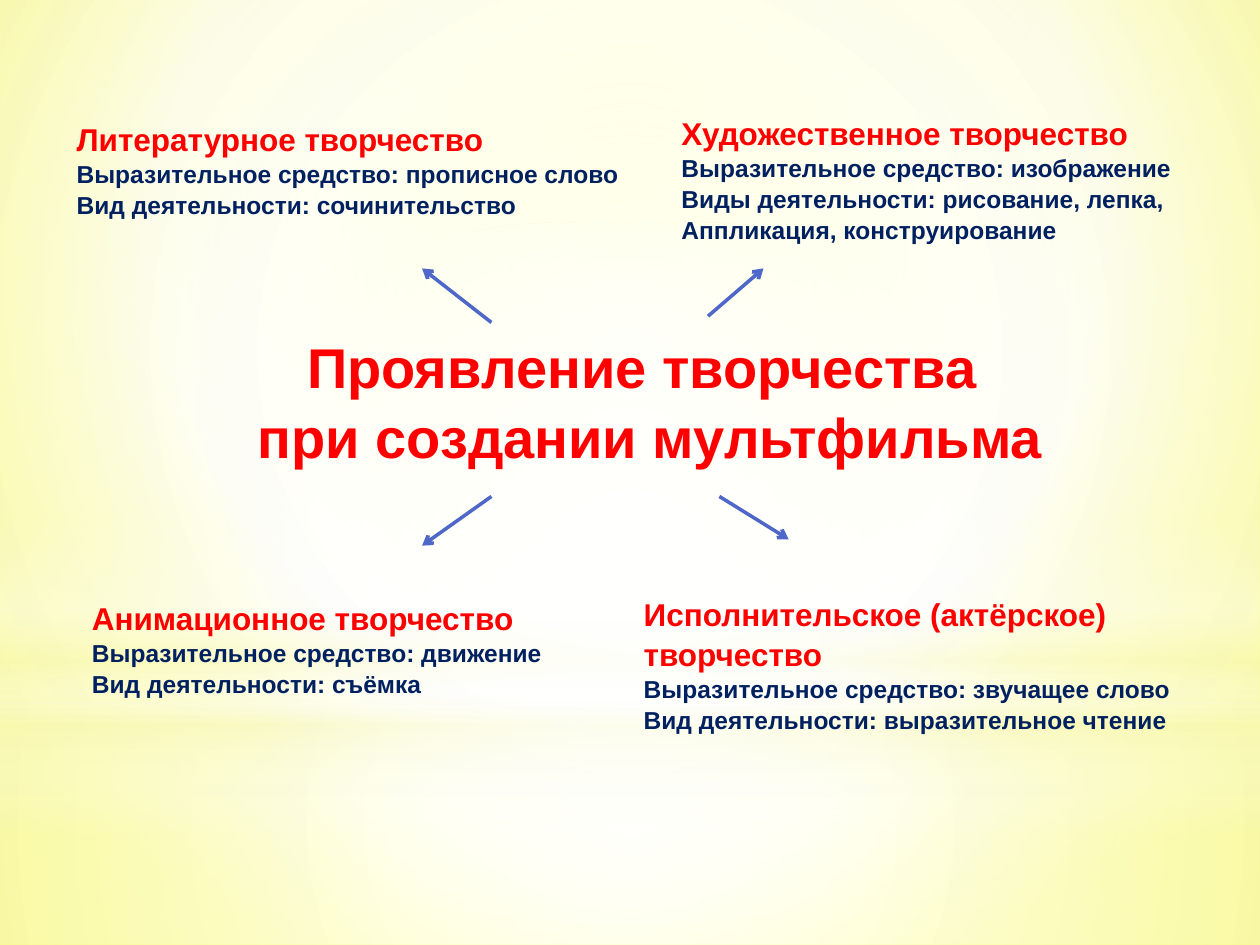
import pptx
import pptx.dml.color
import pptx.enum.shapes
import pptx.enum.text
import pptx.oxml
import pptx.oxml.ns
import pptx.util

Pt = pptx.util.Pt
qn = pptx.oxml.ns.qn
SHAPE = pptx.enum.shapes.MSO_SHAPE
TEXT = pptx.enum.text
RED, NAVY, BLUE = "FF0000", "002060", "4E67C8"
WHITE, CREAM = "FFFFFF", "F8F8B6"
CENTRE = (50, 50, 50, 50)
HEADING = {"size": Pt(18), "color": RED}
DETAIL = {"size": Pt(14), "color": NAVY}
HEADLINE = {"size": Pt(32), "color": RED}

# Gradient bands: shape, box, stops (position, colour, opacity), focus or None for vertical
BANDS = [
    (SHAPE.RECTANGLE, (0, 401.8, 720, 138.2),
     [(0, WHITE, 91), (37, WHITE, 76), (100, CREAM, 79)], CENTRE),
    (SHAPE.RECTANGLE, (0, 0, 720, 401.8),
     [(0, WHITE, 89), (48, WHITE, 62), (100, CREAM, 79)], CENTRE),
    (SHAPE.RECTANGLE, (0, 296.6, 720, 180),
     [(0, WHITE, 0), (29, WHITE, 30), (45, CREAM, 40),
      (55, WHITE, 26), (65, CREAM, 60), (100, WHITE, 0)], None),
    (SHAPE.OVAL, (0, 126, 720, 401.8),
     [(0, WHITE, 100), (56, WHITE, 0)], CENTRE),
]

# Kinds of creativity: box, heading lines, detail lines
TOPICS = [
    ((36.7, 64.1, 326.2, 63.4), ["Литературное творчество"],
     ["Выразительное средство: прописное слово",
      "Вид деятельности: сочинительство"]),
    ((382.3, 60.5, 295.9, 79.9), ["Художественное творчество"],
     ["Выразительное средство: изображение",
      "Виды деятельности: рисование, лепка,",
      "Аппликация, конструирование"]),
    ((45.4, 337.7, 272.9, 85), ["Анимационное творчество"],
     ["Выразительное средство: движение",
      "Вид деятельности: съёмка"]),
    ((360.7, 335.5, 317.5, 85), ["Исполнительское (актёрское)", "творчество"],
     ["Выразительное средство: звучащее слово",
      "Вид деятельности: выразительное чтение"]),
]

# Arrows from the headline to the topics
ARROWS = [
    (280.8, 184.3, 241.2, 153.4),
    (404.6, 180.7, 436.3, 153.4),
    (280.8, 283.7, 241.2, 311.8),
    (411.1, 283.7, 450.7, 308.2),
]


def rgb(value):
    return pptx.dml.color.RGBColor.from_string(value)


def set_gradient(fill, element, stops, focus):
    fill.gradient()
    gradient = element.find(".//" + qn("a:gradFill"))
    stop_xml = "".join(
        f'<a:gs pos="{position * 1000}"><a:srgbClr val="{color}">'
        f'<a:alpha val="{opacity * 1000}"/></a:srgbClr></a:gs>'
        for position, color, opacity in stops)
    if focus:
        left, top, right, bottom = (side * 1000 for side in focus)
        direction = (f'<a:path path="circle"><a:fillToRect l="{left}" t="{top}" '
                     f'r="{right}" b="{bottom}"/></a:path>')
    else:
        direction = '<a:lin ang="5400000" scaled="0"/>'
    new_gradient = pptx.oxml.parse_xml(
        f'<a:gradFill {pptx.oxml.ns.nsdecls("a")} rotWithShape="1">'
        f'<a:gsLst>{stop_xml}</a:gsLst>{direction}</a:gradFill>')
    gradient.getparent().replace(gradient, new_gradient)


def add_band(slide, kind, box, stops, focus):
    band = slide.shapes.add_shape(kind, *map(Pt, box))
    band.shadow.inherit = False
    band.line.fill.background()
    set_gradient(band.fill, band.element, stops, focus)


def write_lines(shape, lines, alignment):
    frame = shape.text_frame
    frame_format = {"word_wrap": False, "vertical_anchor": TEXT.MSO_ANCHOR.TOP,
                    "auto_size": TEXT.MSO_AUTO_SIZE.SHAPE_TO_FIT_TEXT}
    for name, value in frame_format.items():
        setattr(frame, name, value)
    for index, (text, style) in enumerate(lines):
        para = frame.add_paragraph() if index else frame.paragraphs[0]
        para_format = {"alignment": alignment, "line_spacing": 1.05,
                       "space_before": Pt(0), "space_after": Pt(0)}
        for name, value in para_format.items():
            setattr(para, name, value)
        span = para.add_run()
        span.text = text
        font_format = {"name": "Arial", "bold": True, "size": style["size"]}
        for name, value in font_format.items():
            setattr(span.font, name, value)
        span.font.color.rgb = rgb(style["color"])


def add_topic(slide, box, headings, details):
    topic = slide.shapes.add_textbox(*map(Pt, box))
    lines = [(text, HEADING) for text in headings]
    lines += [(text, DETAIL) for text in details]
    write_lines(topic, lines, TEXT.PP_ALIGN.LEFT)


def add_arrow(slide, ends):
    arrow = slide.shapes.add_connector(
        pptx.enum.shapes.MSO_CONNECTOR.STRAIGHT, *map(Pt, ends))
    arrow.line.width = Pt(2)
    arrow.line.color.rgb = rgb(BLUE)
    namespace = pptx.oxml.ns.nsdecls("a")
    arrow.line.color  # the line element exists from here on
    properties = arrow.element.spPr
    properties.find(qn("a:ln")).append(
        pptx.oxml.parse_xml(f'<a:tailEnd {namespace} type="arrow"/>'))
    properties.append(pptx.oxml.parse_xml(f"<a:effectLst {namespace}/>"))


def place_title(slide, box, texts):
    title = slide.shapes.title
    for name, value in zip(("left", "top", "width", "height"), box):
        setattr(title, name, Pt(value))
    write_lines(title, [(text, HEADLINE) for text in texts], TEXT.PP_ALIGN.CENTER)
    # Bring the title in front of the bands
    title.element.getparent().append(title.element)


def main():
    deck = pptx.Presentation()
    deck.slide_width, deck.slide_height = Pt(720), Pt(540)
    slide = deck.slides.add_slide(deck.slide_layouts[5])

    # Background
    set_gradient(slide.background.fill, slide.element,
                 [(0, "FFFF9E", 100), (60, WHITE, 100), (100, "FFFF5B", 100)],
                 (20, 10, 20, 60))
    for band in BANDS:
        add_band(slide, *band)

    # Topics, arrows and headline
    for topic in TOPICS:
        add_topic(slide, *topic)
    for ends in ARROWS:
        add_arrow(slide, ends)
    place_title(slide, (138.2, 184.3, 466.6, 85),
                ["Проявление творчества ", "при создании мультфильма"])
    deck.save("out.pptx")


if __name__ == "__main__":
    main()
